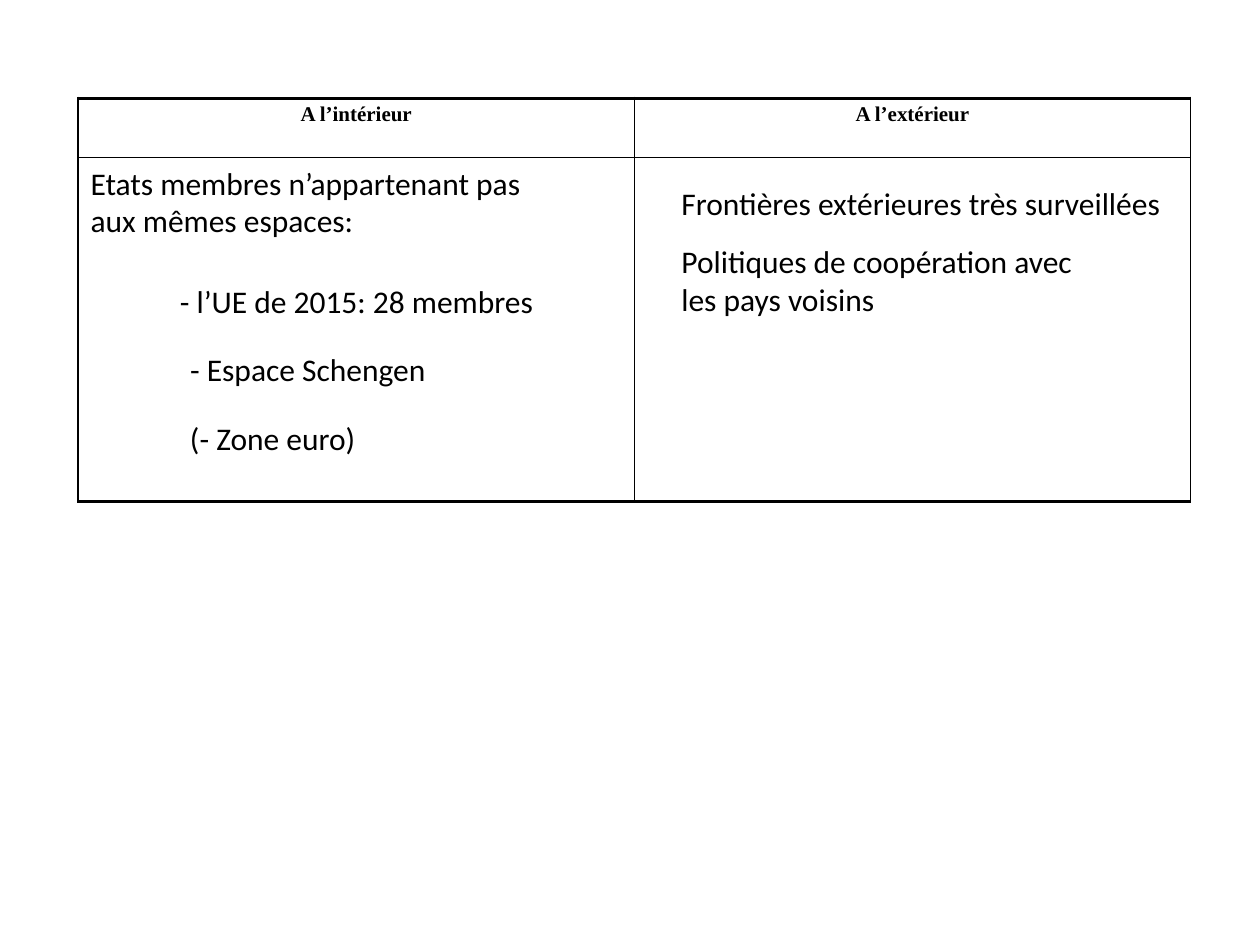
from lxml import etree
from pptx import Presentation, util as u
from pptx.dml.color import RGBColor
from pptx.enum import text as t
from pptx.oxml.ns import qn

THEME = {
    "ink": "000000", "paper": "FFFFFF",
    "head": {"name": "Times New Roman", "size": u.Pt(12), "bold": True},
    "body": {"name": "Calibri", "size": u.Pt(18), "bold": False},
}
WIDE, HIGH = 10, 7.5
GRID = (0.62, 0.78, 8.83, 3.2)
HEAD = 0.47  # height of the heading row
PAD = 0.04
HEADS = ["A l’intérieur", "A l’extérieur"]

# Notes: left and top from the table corner, width, wrap, lines
NOTES = [
    (0, 0.47, 4.38, True, ["Etats membres n’appartenant pas", "aux mêmes espaces:"]),
    (0.71, 1.41, 3.04, False, ["- l’UE de 2015: 28 membres"]),
    (0.79, 1.95, 2.09, False, ["- Espace Schengen"]),
    (0.79, 2.5, 1.53, False, ["(- Zone euro)"]),
    (4.69, 0.63, 4.18, False, ["Frontières extérieures très surveillées"]),
    (4.69, 1.09, 3.54, False, ["Politiques de coopération avec", "les pays voisins"]),
]


def put(obj, vals):
    for key, val in vals.items():
        setattr(obj, key, val)


def write(para, line, style):
    run = para.add_run()
    run.text = line
    put(run.font, THEME[style])
    run.font.color.rgb = RGBColor.from_string(THEME["ink"])


def edge(cell, sides):
    """Draw cell borders; sides maps L, R, T and B to points."""
    props = cell._tc.get_or_add_tcPr()
    for pos, (side, size) in enumerate(sides.items()):
        line = etree.Element(qn("a:ln" + side), w=str(u.Pt(size)))
        fill = etree.SubElement(line, qn("a:solidFill"))
        etree.SubElement(fill, qn("a:srgbClr"), val=THEME["ink"])
        props.insert(pos, line)


def add_grid(slide, box):
    """Two columns: a heading row over an open row."""
    rows = [HEAD, box[3] - HEAD]
    frame = slide.shapes.add_table(2, 2, *map(u.Inches, box))
    table = frame.table
    put(table, {"first_row": False, "horz_banding": False})
    for col in table.columns:
        col.width = u.Inches(box[2] / 2)
    for row, high in zip(table.rows, rows):
        row.height = u.Inches(high)

    # Headings
    pad = u.Inches(PAD)
    for cell, head in zip(table.rows[0].cells, HEADS):
        put(cell, {"margin_" + side: pad for side in ("left", "right", "top", "bottom")})
        para = cell.text_frame.paragraphs[0]
        para.alignment = t.PP_ALIGN.CENTER
        write(para, head, "head")
        cell.fill.solid()
        cell.fill.fore_color.rgb = RGBColor.from_string(THEME["paper"])
        edge(cell, {"L": 1, "R": 1, "T": 2, "B": 0.25})

    # Open cells
    for cell in table.rows[1].cells:
        cell.fill.background()
        edge(cell, {"L": 1, "R": 1, "T": 0.25, "B": 2})


def add_notes(slide, box):
    """Text boxes laid over the open row."""
    for left, top, wide, wrap, lines in NOTES:
        high = 0.1 + 0.3 * len(lines)
        place = (box[0] + left, box[1] + top, wide, high)
        frame = slide.shapes.add_textbox(*map(u.Inches, place)).text_frame
        put(frame, {"word_wrap": wrap, "auto_size": t.MSO_AUTO_SIZE.SHAPE_TO_FIT_TEXT})
        for pos, line in enumerate(lines):
            para = frame.add_paragraph() if pos else frame.paragraphs[0]
            write(para, line, "body")


def main():
    deck = Presentation()
    put(deck, {"slide_width": u.Inches(WIDE), "slide_height": u.Inches(HIGH)})
    slide = deck.slides.add_slide(deck.slide_layouts[6])
    add_grid(slide, GRID)
    add_notes(slide, GRID)
    deck.save("out.pptx")


if __name__ == "__main__":
    main()
